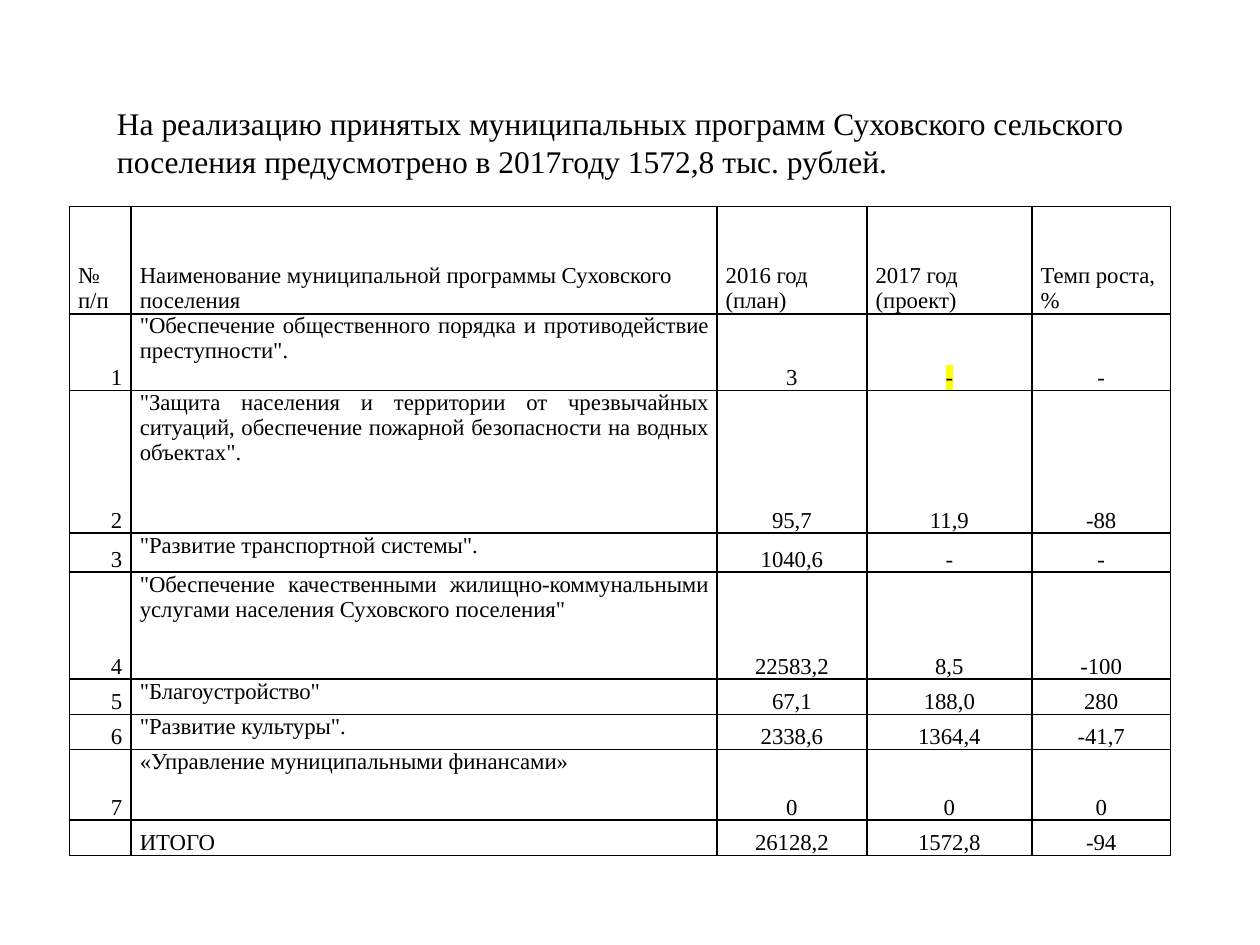
from lxml import etree
from pptx import Presentation
from pptx import util as u
from pptx.dml.color import RGBColor
from pptx.enum import text
from pptx.oxml import ns

IN = u.Inches
ALIGN, ANCHOR = text.PP_ALIGN, text.MSO_ANCHOR


def tint(code):
    return RGBColor.from_string(code)


def put(obj, vals):
    for name, val in vals.items():
        setattr(obj, name, val)


def node(root, tag, **vals):
    return etree.SubElement(root, ns.qn("a:" + tag), **vals)


class Deck:
    font = "Times New Roman"
    ink = "000000"
    mark = "FFFF00"
    inset = {"margin_left": IN(0.07), "margin_right": IN(0.07),
             "margin_top": 0, "margin_bottom": 0}

    def __init__(self, wide, high):
        self.prs = Presentation()
        put(self.prs, {"slide_width": IN(wide), "slide_height": IN(high)})
        self.slide = self.prs.slides.add_slide(self.prs.slide_layouts[6])

    def label(self, para, words, size, align=ALIGN.LEFT):
        """Fill a paragraph; an empty one only gets its size."""
        para.alignment = align
        if not words:
            node(para._p, "endParaRPr", sz=str(size * 100))
            return None
        run = para.add_run()
        run.text = words
        put(run.font, {"size": u.Pt(size), "name": self.font})
        run.font.color.rgb = tint(self.ink)
        return run

    def title(self, words, box, size):
        frame = self.slide.shapes.add_textbox(*map(IN, box)).text_frame
        frame.word_wrap = True
        self.label(frame.paragraphs[0], words, size)

    def light(self, run):
        """Put the marker colour behind a run."""
        props = run._r.get_or_add_rPr()
        glow = node(props, "highlight")
        node(glow, "srgbClr", val=self.mark)
        props.find(ns.qn("a:latin")).addprevious(glow)

    def frame(self, cell):
        """Draw a thin line on each side of a cell."""
        props = cell._tc.get_or_add_tcPr()
        for side in "LRTB":
            line = node(props, "ln" + side, w=str(u.Pt(1)))
            node(node(line, "solidFill"), "srgbClr", val=self.ink)
        cell.fill.background()

    def table(self, rows, left, top, wides, highs, size, marked):
        grid = self.slide.shapes.add_table(
            len(rows), len(wides), IN(left), IN(top),
            IN(sum(wides)), IN(sum(highs))).table
        put(grid, {"first_row": False, "horz_banding": False})
        for col, wide in zip(grid.columns, wides):
            col.width = IN(wide)
        for row, high in zip(grid.rows, highs):
            row.height = IN(high)
        body = [ALIGN.RIGHT, ALIGN.JUSTIFY] + [ALIGN.CENTER] * 3
        total = [ALIGN.LEFT] * 2 + body[2:]
        last = len(rows) - 1
        for r, row in enumerate(rows):
            aligns = {0: [ALIGN.LEFT] * 5, last: total}.get(r, body)
            for c, (words, align) in enumerate(zip(row, aligns)):
                cell = grid.cell(r, c)
                high = align == ALIGN.JUSTIFY
                put(cell, self.inset)
                cell.vertical_anchor = ANCHOR.TOP if high else ANCHOR.BOTTOM
                self.frame(cell)
                run = self.label(cell.text_frame.paragraphs[0], words, size, align)
                if (r, c) == marked:
                    self.light(run)


HEAD = ("№ п/п", "Наименование муниципальной программы Суховского поселения",
        "2016 год (план)", "2017 год (проект)", "Темп роста,%")
PLANS = [
    ('"Обеспечение общественного порядка и противодействие преступности".',
     "3", "-", "-"),
    ('"Защита населения и территории от чрезвычайных ситуаций, обеспечение '
     'пожарной безопасности на водных объектах".', "95,7", "11,9", "-88"),
    ('"Развитие транспортной системы".', "1040,6", "-", "-"),
    ('"Обеспечение качественными жилищно-коммунальными услугами населения '
     'Суховского поселения"', "22583,2", "8,5", "-100"),
    ('"Благоустройство"', "67,1", "188,0", "280"),
    ('"Развитие культуры".', "2338,6", "1364,4", "-41,7"),
    ("«Управление муниципальными финансами»", "0", "0", "0"),
]
TOTAL = ("", "ИТОГО", "26128,2", "1572,8", "-94")


def main():
    deck = Deck(10, 7.5)
    deck.title("На реализацию принятых муниципальных программ Суховского "
               "сельского поселения предусмотрено в 2017году 1572,8 тыс. рублей.",
               (0.83, 0.78, 8.35, 0.71), 18)
    rows = [HEAD] + [(str(n), *plan) for n, plan in enumerate(PLANS, 1)] + [TOTAL]
    deck.table(rows, 0.55, 1.64, [0.49, 4.65, 1.19, 1.31, 1.1],
               [0.85, 0.61, 1.13, 0.31, 0.85, 0.28, 0.28, 0.56, 0.28],
               13, marked=(1, 3))
    deck.prs.save("out.pptx")


if __name__ == "__main__":
    main()
